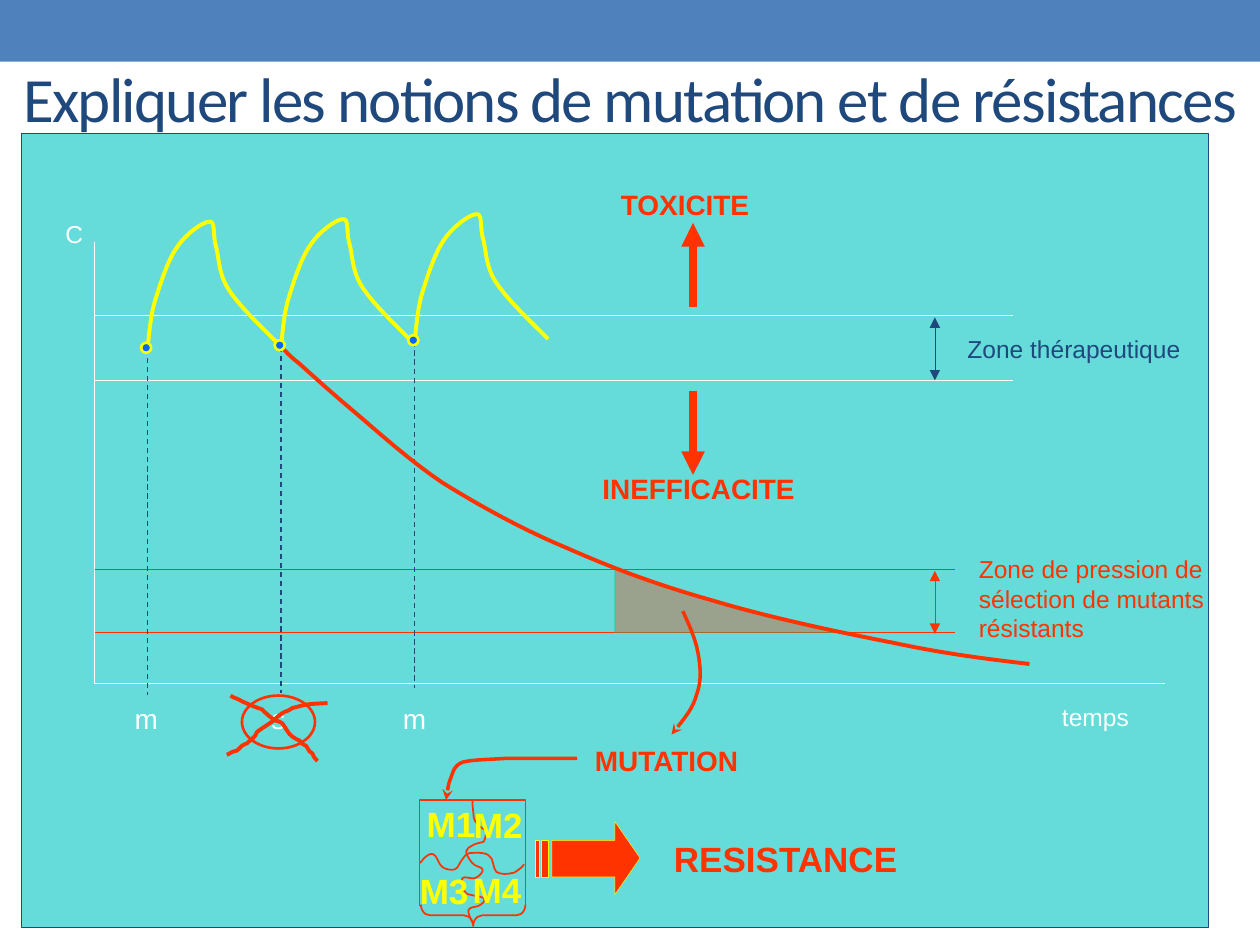
from pptx import Presentation
from pptx import util as u
from pptx.dml.color import RGBColor
from pptx.enum import dml, shapes as kinds, text
from pptx.oxml.ns import qn
from lxml import etree

PX = 9144  # EMU per px, 100 px to the inch


class Theme:
    BAR, PANEL, NAVY = "4F81BD", "65DCD9", "1F497D"
    WHITE, RED, YELLOW = "FFFFFF", "FF3300", "FFFF00"
    GREEN, BLUE = "00CC99", "0066FF"
    SANS, TITLE_FONT = "Arial", "Calibri"
    LABEL, KEYWORD, BIG, TITLE = 14, 16, 20, 36
    HAIR, THIN, OUTLINE, RING, POINTER, CURVE, BOLD = 0.25, 0.75, 1, 1.5, 2, 2.25, 4.5


# Points of the curves: start, then two handles and an end for each piece
DOSE = [0, 0, 1, -6, 2, -25, 6, -38, 10, -51, 16, -70, 23, -80, 30, -91, 44, -101, 49, -101,
        54, -102, 52, -92, 54, -83, 57, -74, 56, -61, 64, -48, 73, -34, 90, -18, 106, -2]
DECLINE = [225, 277, 227, 279, 228, 281, 238, 289, 247, 297, 260, 309, 279, 325,
           298, 341, 323, 364, 351, 383, 380, 401, 414, 420, 450, 435,
           486, 451, 524, 465, 567, 477, 610, 490, 667, 502, 708, 510,
           750, 519, 783, 523, 817, 527]
CROSS_DOWN = [183, 552, 185, 554, 188, 554, 191, 556, 197, 559, 202, 561, 208, 563,
              212, 567, 214, 569, 219, 572, 220, 572, 223, 573, 224, 574,
              225, 576, 227, 578, 228, 580, 230, 584, 234, 586, 238, 588,
              239, 591, 241, 590, 243, 592, 247, 598, 244, 595, 248, 598,
              249, 601, 250, 602, 252, 604]
CROSS_UP = [260, 558, 240, 559, 244, 559, 232, 562, 230, 563, 228, 565, 226, 565,
            226, 565, 225, 566, 224, 566, 223, 567, 220, 569, 220, 569,
            217, 573, 209, 577, 204, 581, 203, 585, 199, 587, 196, 590,
            194, 591, 193, 591, 192, 592, 191, 593, 190, 594, 190, 594,
            187, 597, 189, 595, 184, 597, 183, 598, 180, 599, 180, 599]
SEAM_DOWN = [375, 635, 375, 641, 376, 646, 376, 649, 377, 652, 378, 653, 380, 655,
             381, 657, 385, 658, 386, 660, 386, 662, 385, 666, 384, 668,
             382, 669, 378, 669, 375, 671, 373, 672, 371, 673, 370, 676,
             370, 678, 373, 683, 375, 685, 377, 688, 383, 688, 383, 690,
             384, 692, 380, 696, 377, 697, 374, 698, 369, 695, 367, 697,
             366, 699, 367, 706, 370, 709, 373, 711, 382, 711, 384, 713,
             386, 715, 382, 718, 380, 719, 377, 720, 373, 720, 372, 722,
             371, 724, 373, 728, 375, 732]
SEAM_ACROSS = [333, 685, 335, 684, 336, 681, 338, 680, 339, 679, 342, 677, 344, 678,
               347, 679, 348, 686, 351, 688, 353, 690, 359, 691, 361, 690,
               364, 689, 365, 684, 367, 682, 369, 680, 369, 678, 373, 677,
               376, 677, 385, 676, 388, 679, 392, 681, 391, 689, 394, 692,
               397, 694, 403, 694, 406, 693, 409, 693, 410, 691, 412, 690,
               414, 689, 415, 687, 416, 686]
TO_MUTATION = [542, 485, 547, 496, 552, 507, 554, 518, 556, 529, 557, 540, 553, 551,
               550, 562, 541, 573, 533, 583]
TO_VIRUS = [458, 602, 437, 602, 415, 602, 400, 602, 385, 603, 374, 603, 367, 605,
            360, 608, 360, 612, 358, 617, 356, 622, 355, 628, 354, 635]


def px(*lengths):
    return [u.Emu(length * PX) for length in lengths]


def paint(shape, fill=None, line=None, width=Theme.HAIR, alpha=None):
    shape.shadow.inherit = False
    if fill:
        shape.fill.solid()
        shape.fill.fore_color.rgb = RGBColor.from_string(fill)
        if alpha:
            color = shape.fill._xPr.find(qn("a:solidFill"))[0]
            etree.SubElement(color, qn("a:alpha")).set("val", str(alpha * 1000))
    else:
        shape.fill.background()
    if line:
        stroke(shape, line, width)
    else:
        shape.line.fill.background()
    return shape


def stroke(part, color, width):
    part.line.color.rgb = RGBColor.from_string(color)
    part.line.width = u.Pt(width)


def arrowheads(part, **ends):
    ln = part.line._get_or_add_ln()
    for end, kind in ends.items():
        etree.SubElement(ln, qn(f"a:{end}")).set("type", kind)


def preset(slide, kind, box, **look):
    return paint(slide.shapes.add_shape(kind, *px(*box)), **look)


def line(slide, start, end, color, width=Theme.HAIR, dash=None, **ends):
    connector = slide.shapes.add_connector(kinds.MSO_CONNECTOR.STRAIGHT, *px(*start, *end))
    stroke(connector, color, width)
    if dash:
        connector.line.dash_style = dash
    etree.SubElement(connector._element.spPr, qn("a:effectLst"))
    arrowheads(connector, **ends)


def outline(slide, *contours, close=False, **look):
    builder = slide.shapes.build_freeform(*contours[0][0], scale=PX)
    for index, contour in enumerate(contours):
        if index:
            builder.move_to(*contour[0])
        builder.add_line_segments(contour[1:], close=close)
    return paint(builder.convert_to_shape(), **look)


def curve(slide, numbers, color, width, origin=(0, 0), **ends):
    points = [(x + origin[0], y + origin[1]) for x, y in zip(numbers[::2], numbers[1::2])]
    shape = outline(slide, points, line=color, width=width)
    track = shape._element.find(".//" + qn("a:path"))
    steps = track.findall(qn("a:lnTo"))
    for i in range(0, len(steps), 3):  # every three points become one Bezier piece
        piece = etree.SubElement(track, qn("a:cubicBezTo"))
        for step in steps[i:i + 3]:
            piece.append(step[0])
            track.remove(step)
    arrowheads(shape, **ends)


def label(slide, words, box, color, size, center=False, bold=False, face=Theme.SANS, spacing=None):
    frame = slide.shapes.add_textbox(*px(*box)).text_frame
    frame.word_wrap = True
    paragraph = frame.paragraphs[0]
    paragraph.alignment = text.PP_ALIGN.CENTER if center else text.PP_ALIGN.LEFT
    run = paragraph.add_run()
    run.text = words
    for name, value in dict(size=u.Pt(size), name=face, bold=bold).items():
        setattr(run.font, name, value)
    run.font.color.rgb = RGBColor.from_string(color)
    if spacing:
        run._r.get_or_add_rPr().set("spc", str(spacing))


def draw_axes_and_zones(slide, t):
    outline(slide, [(75, 192), (75, 542), (925, 542)], line=t.WHITE)
    for color, right, levels in ((t.WHITE, 804, (250, 302)), (t.RED, 758, (452, 502))):
        for y in levels:
            line(slide, (75, y), (right, y), color)


def draw_doses(slide, t):
    starts = [(117, 277), (223, 275), (329, 271)]
    for start in starts:
        curve(slide, DOSE, t.YELLOW, t.CURVE, start)
    for x, y in starts:
        line(slide, (x, y), (x, y + 275), t.NAVY, t.THIN, dml.MSO_LINE.DASH)
    for words, x in (("m", 87), ("m", 300), ("s", 192)):
        label(slide, words, (x, 552, 58, 37), t.WHITE, t.KEYWORD, center=True)
    # Skipped dose
    preset(slide, kinds.MSO_SHAPE.OVAL, (192, 552, 58, 42), line=t.RED, width=t.RING)
    for stroke_points in (CROSS_DOWN, CROSS_UP):
        curve(slide, stroke_points, t.RED, t.CURVE)
    # Falling concentration over the mutant selection area
    outline(slide, [(488, 452), (488, 502), (661, 502), (627, 494), (583, 483), (517, 462)],
            close=True, fill=t.RED, alpha=35, line=t.GREEN)
    curve(slide, DECLINE, t.RED, t.CURVE)
    for x, y in starts:
        preset(slide, kinds.MSO_SHAPE.OVAL, (x - 5, y - 5, 8, 8),
               fill=t.BLUE, line=t.YELLOW, width=t.RING)


def draw_labels(slide, t):
    for top, color in ((252, t.NAVY), (453, t.RED)):
        line(slide, (742, top), (742, top + 50), color, headEnd="triangle", tailEnd="triangle")
    for start, end in ((244, 177), (310, 377)):
        line(slide, (550, start), (550, end), t.RED, t.BOLD, tailEnd="triangle")
    for words, box, color in (
            ("temps", (833, 552, 125, 33), t.WHITE),
            ("C", (42, 169, 42, 33), t.WHITE),
            ("Zone thérapeutique", (758, 260, 208, 33), t.NAVY),
            ("Zone de pression de sélection de mutants résistants", (767, 435, 208, 80), t.RED)):
        label(slide, words, box, color, t.LABEL)
    for words, box, center in (("TOXICITE", (483, 144, 142, 37), False),
                               ("INEFFICACITE", (467, 369, 175, 37), True),
                               ("MUTATION", (458, 585, 142, 37), True)):
        label(slide, words, box, t.RED, t.KEYWORD, center, bold=True)


def draw_mutants(slide, t):
    # Virus split in four
    brace = preset(slide, kinds.MSO_SHAPE.RIGHT_BRACE, (367, 685, 17, 83), line=t.RED, width=t.OUTLINE)
    brace.rotation = 90
    brace.adjustments[0] = 0.42
    outline(slide, [(333, 719), (333, 635), (417, 635), (417, 719)], line=t.RED, width=t.OUTLINE)
    for seam in (SEAM_DOWN, SEAM_ACROSS):
        curve(slide, seam, t.RED, t.OUTLINE)
    for words, box in (("M1", (323, 632, 70, 43)), ("M3", (315, 685, 75, 43)),
                       ("M4", (363, 684, 63, 43)), ("M2", (359, 633, 73, 43))):
        label(slide, words, box, t.YELLOW, t.BIG, center=True, bold=True)
    # Striped arrow to resistance
    head = [(488, 652), (488, 667), (438, 667), (438, 696), (488, 696), (488, 710), (508, 681)]
    stripes = [[(a, 667), (a, 696), (b, 696), (b, 667)] for a, b in ((430, 435), (425, 428))]
    outline(slide, head, *stripes, close=True, fill=t.RED, line=t.YELLOW)
    label(slide, "RESISTANCE", (525, 660, 242, 43), t.RED, t.BIG, bold=True)
    for pointer in (TO_MUTATION, TO_VIRUS):
        curve(slide, pointer, t.RED, t.POINTER, tailEnd="stealth")


def main():
    t = Theme
    deck = Presentation()
    deck.slide_width, deck.slide_height = px(1000, 750)
    slide = deck.slides.add_slide(deck.slide_layouts[6])
    # Top bar and panel
    preset(slide, kinds.MSO_SHAPE.RECTANGLE, (0, 0, 1000, 49), fill=t.BAR)
    preset(slide, kinds.MSO_SHAPE.RECTANGLE, (17, 106, 942, 630),
           fill=t.PANEL, line=t.NAVY, width=t.THIN)
    for draw in (draw_axes_and_zones, draw_doses, draw_labels, draw_mutants):
        draw(slide, t)
    label(slide, "Expliquer les notions de mutation et de résistances", (0, 42, 1000, 71),
          t.NAVY, t.TITLE, center=True, face=t.TITLE_FONT, spacing=-100)
    deck.save("out.pptx")


if __name__ == "__main__":
    main()
